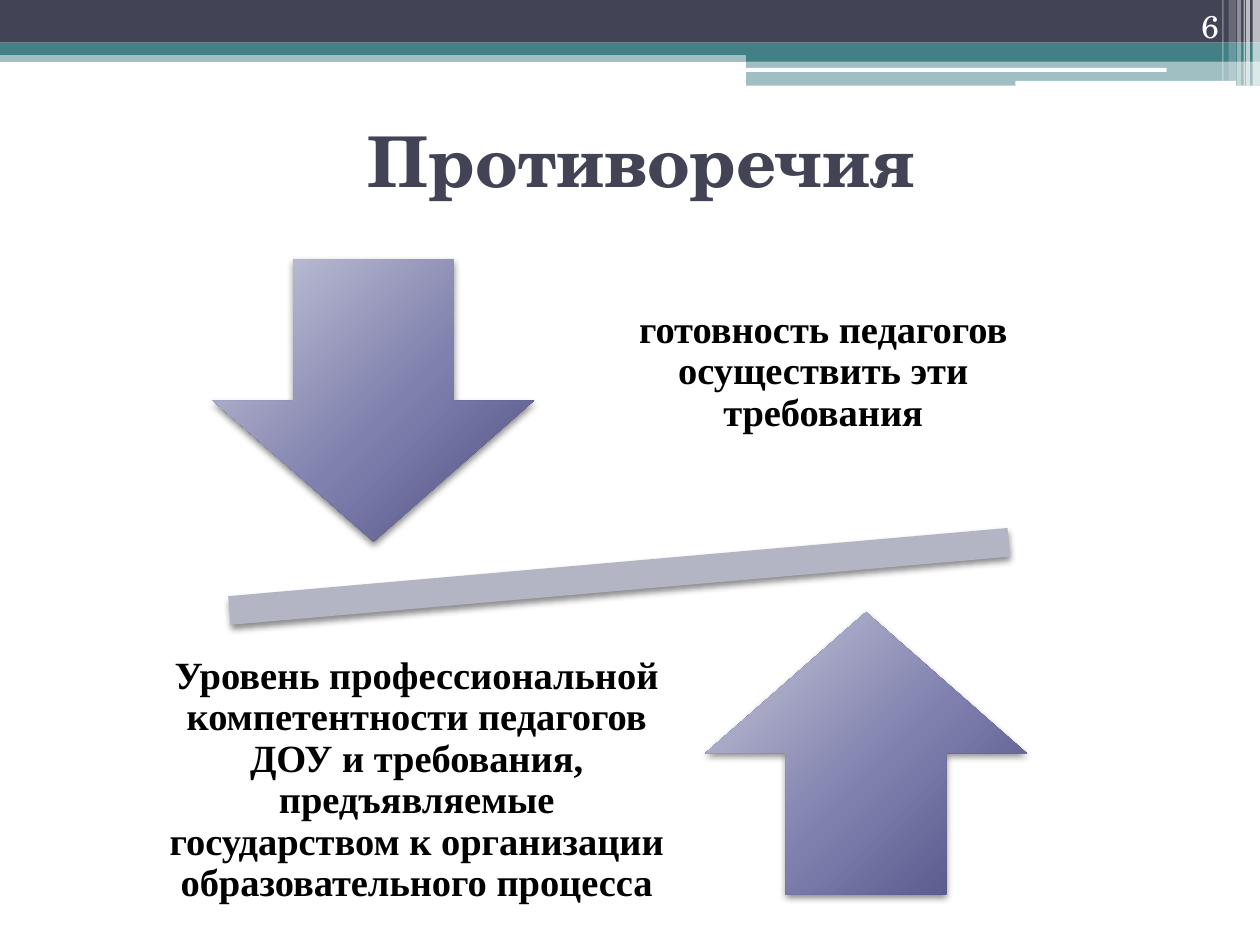
from lxml.etree import SubElement
from pptx import Presentation
from pptx.dml.color import RGBColor
from pptx.enum.shapes import MSO_SHAPE
from pptx.enum.text import MSO_ANCHOR, PP_ALIGN
from pptx.oxml import parse_xml
from pptx.oxml.ns import nsdecls, qn
from pptx.util import Cm, Pt

SLATE = RGBColor(0x42, 0x44, 0x56)
TEAL = RGBColor(0x43, 0x80, 0x86)
LAVENDER = RGBColor(0xB3, 0xB4, 0xC4)
BLACK = RGBColor(0, 0, 0)
WHITE = RGBColor(0xFF, 0xFF, 0xFF)
ARROW_STOPS = (
    (0, RGBColor(0xC9, 0xC9, 0xDA)),
    (55, RGBColor(0x7F, 0x80, 0xAE)),
    (100, RGBColor(0x4D, 0x4E, 0x81)),
)
HEADING_FONT = "TeX Gyre Schola"
BODY_FONT = "Times New Roman"


def write_text(box, text, font, size, color, bold=False, align=PP_ALIGN.CENTER,
               anchor=MSO_ANCHOR.MIDDLE, spacing=None):
    frame = box.text_frame
    frame.word_wrap = True
    frame.vertical_anchor = anchor
    para = frame.paragraphs[0]
    para.alignment = align
    para.line_spacing = spacing
    span = para.add_run()
    span.text = text
    span.font.name = font
    span.font.size = Pt(size)
    span.font.bold = bold
    span.font.color.rgb = color


class PageBuilder:
    """Draws styled elements on the current page."""

    def __init__(self, page):
        self.page = page

    def block(self, place, color, opacity=100, kind=MSO_SHAPE.RECTANGLE):
        shape = self.page.shapes.add_shape(kind, *map(Cm, place))
        shape.shadow.inherit = False
        shape.line.fill.background()
        shape.fill.solid()
        shape.fill.fore_color.rgb = color
        if opacity < 100:
            tint = shape._element.spPr.find(f".//{qn('a:srgbClr')}")
            SubElement(tint, qn("a:alpha"), val=str(opacity * 1000))
        return shape

    def raised(self, place, color, kind):
        shape = self.block(place, color, kind=kind)
        effects = shape._element.spPr.find(qn("a:effectLst"))
        effects.append(parse_xml(
            f'<a:outerShdw {nsdecls("a")} blurRad="{Pt(4)}" dist="{Pt(2)}" '
            'dir="5400000" rotWithShape="0"><a:srgbClr val="000000">'
            '<a:alpha val="45000"/></a:srgbClr></a:outerShdw>'))
        return shape

    def arrow(self, place, kind):
        properties = self.raised(place, LAVENDER, kind)._element.spPr
        stops = "".join(
            f'<a:gs pos="{position * 1000}"><a:srgbClr val="{color}"/></a:gs>'
            for position, color in ARROW_STOPS)
        gradient = parse_xml(
            f'<a:gradFill {nsdecls("a")} rotWithShape="1"><a:gsLst>{stops}</a:gsLst>'
            '<a:path path="circle"><a:fillToRect l="-40000" t="-90000" '
            'r="140000" b="190000"/></a:path></a:gradFill>')
        properties.replace(properties.find(qn("a:solidFill")), gradient)

    def label(self, place, text, **style):
        box = self.page.shapes.add_textbox(*map(Cm, place))
        write_text(box, text, **style)
        return box

    def statement(self, place, text):
        box = self.label(place, text, font=BODY_FONT, size=22, color=BLACK,
                         bold=True, spacing=0.9)
        frame = box.text_frame
        frame.margin_left = frame.margin_right = Cm(0.43)
        frame.margin_top = frame.margin_bottom = Cm(0.43)

    def header(self):
        self.block((0, 1.02, 25.4, 0.23), TEAL, 50)
        self.block((0, 0, 25.4, 0.86), SLATE)
        self.block((0, 0.86, 25.4, 0.25), TEAL)
        self.block((15.04, 0.99, 10.36, 0.25), TEAL)
        self.block((15.04, 1.22, 10.36, 0.51), TEAL, 50)
        for place in ((15.01, 1.37, 8.51, 0.08), (20.47, 1.63, 4.45, 0.1)):
            self.block(place, WHITE, kind=MSO_SHAPE.ROUNDED_RECTANGLE)
        stripes = (
            (25.25, 0.15, 1.73, 65), (25.12, 0.08, 1.73, 65),
            (25.07, 0.03, 1.73, 60), (24.94, 0.08, 1.73, 40),
            (24.77, 0.15, 1.63, 20), (24.64, 0.03, 1.63, 30),
        )
        for left, width, height, opacity in stripes:
            self.block((left, 0, width, height), WHITE, opacity)


def main():
    deck = Presentation()
    deck.slide_width, deck.slide_height = Cm(25.4), Cm(19.05)
    builder = PageBuilder(deck.slides.add_slide(deck.slide_layouts[6]))

    builder.header()
    beam = builder.raised((1.75, 10.39, 21.46, 2.46), LAVENDER, MSO_SHAPE.MATH_MINUS)
    beam.rotation = 355
    builder.arrow((4.29, 5.23, 6.48, 5.69), MSO_SHAPE.DOWN_ARROW)
    builder.statement((11.3, 4.52, 10.59, 5.97),
                      "готовность педагогов осуществить эти требования")
    builder.arrow((14.22, 12.34, 6.48, 5.69), MSO_SHAPE.UP_ARROW)
    builder.statement((2.9, 12.75, 11, 5.97),
                      "Уровень профессиональной компетентности педагогов ДОУ "
                      "и требования, предъявляемые государством к организации "
                      "образовательного процесса")
    builder.label((1.5, 1.73, 22.86, 2.97), "Противоречия", font=HEADING_FONT,
                  size=40, color=SLATE, bold=True)
    builder.label((22.71, 0, 2.11, 1.02), "6", font=HEADING_FONT, size=18,
                  color=WHITE, align=PP_ALIGN.RIGHT, anchor=MSO_ANCHOR.BOTTOM)
    deck.save("out.pptx")


if __name__ == "__main__":
    main()
